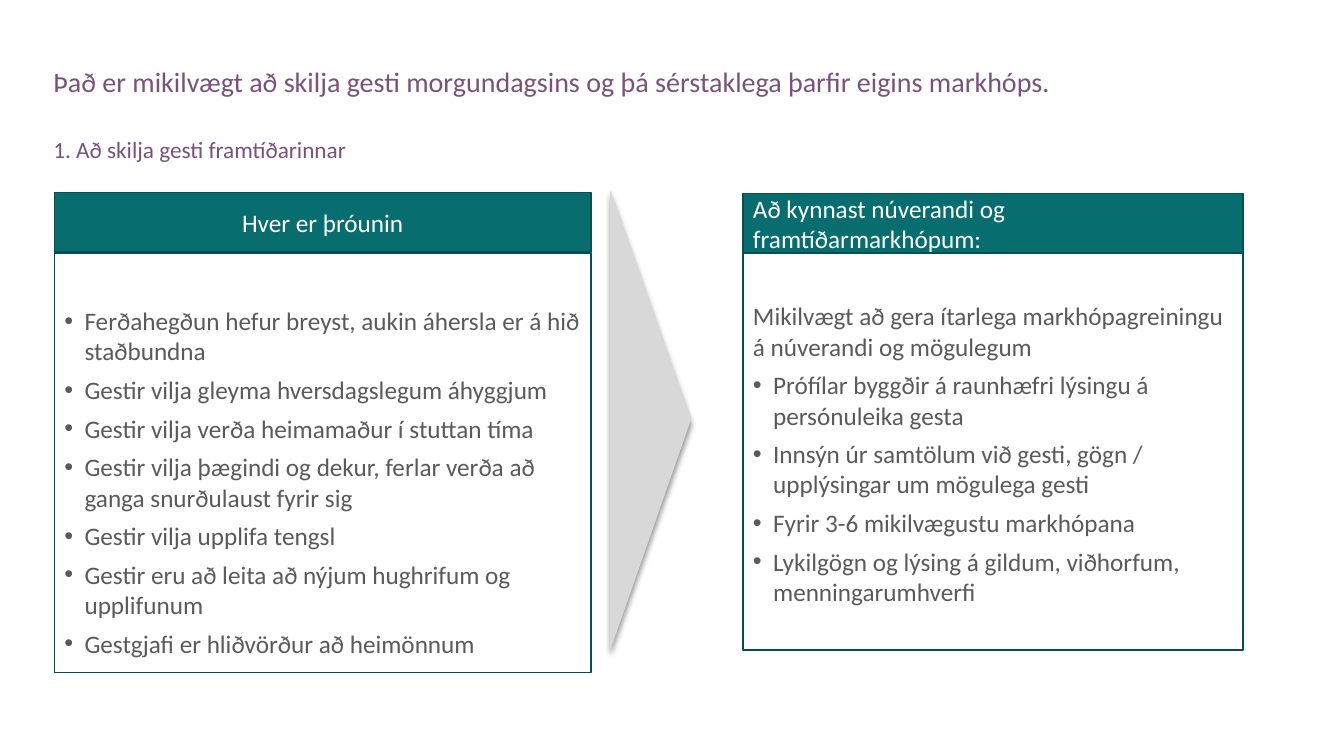
"""Builds a slide on understanding the guests of the future."""
from lxml import etree
from pptx import Presentation
from pptx import util as u
from pptx.dml.color import RGBColor
from pptx.enum import shapes, text
from pptx.oxml.ns import qn

COLORS = {"plum": "79527B", "teal": "086D6E", "border": "054F50",
          "body": "595A59", "arrow": "D8D8D8", "white": "FFFFFF", "shadow": "000000"}
FONT = "Calibri"
HEADING = "Það er mikilvægt að skilja gesti morgundagsins og þá sérstaklega þarfir eigins markhóps."
SUBHEADING = "1. Að skilja gesti framtíðarinnar"
TRENDS = [
    "Ferðahegðun hefur breyst, aukin áhersla er á hið staðbundna",
    "Gestir vilja gleyma hversdagslegum áhyggjum",
    "Gestir vilja verða heimamaður í stuttan tíma",
    "Gestir vilja þægindi og dekur, ferlar verða að ganga snurðulaust fyrir sig",
    "Gestir vilja upplifa tengsl",
    "Gestir eru að leita að nýjum hughrifum og upplifunum",
    "Gestgjafi er hliðvörður að heimönnum",
]
AUDIENCE_INTRO = "Mikilvægt að gera ítarlega markhópagreiningu á núverandi og mögulegum"
AUDIENCES = [
    "Prófílar byggðir á raunhæfri lýsingu á persónuleika gesta",
    "Innsýn úr samtölum við gesti, gögn / upplýsingar um mögulega gesti",
    "Fyrir 3-6 mikilvægustu markhópana",
    "Lykilgögn og lýsing á gildum, viðhorfum, menningarumhverfi",
]


def rgb(name):
    return RGBColor.from_string(COLORS[name])


def set_values(target, values):
    for name, value in values.items():
        setattr(target, name, value)


def add_child(parent, tag, **attributes):
    child = etree.SubElement(parent, qn(tag))
    for name, value in attributes.items():
        child.set(name, str(value))
    return child


def set_bullet(paragraph, bulleted):
    properties = paragraph._p.get_or_add_pPr()
    indent = u.Inches(0.2) if bulleted else 0
    properties.set("marL", str(indent))
    properties.set("indent", str(-indent))
    if bulleted:
        add_child(add_child(properties, "a:buClr"), "a:srgbClr", val=COLORS["body"])
        add_child(properties, "a:buFont", typeface="Arial")
        add_child(properties, "a:buChar", char="•")
    else:
        add_child(properties, "a:buNone")


def format_frame(frame, anchor, top=0.05):
    set_values(frame, {
        "word_wrap": True, "auto_size": text.MSO_AUTO_SIZE.NONE, "vertical_anchor": anchor,
        "margin_left": u.Inches(0.1), "margin_right": u.Inches(0.1),
        "margin_top": u.Inches(top), "margin_bottom": u.Inches(0.05)})


def write_paragraph(paragraph, words, size, color, bulleted=False, **values):
    paragraph.text = words
    set_bullet(paragraph, bulleted)
    set_values(paragraph, {"alignment": text.PP_ALIGN.LEFT, "space_before": u.Pt(0), **values})
    set_values(paragraph.font, {"name": FONT, "size": u.Pt(size)})
    paragraph.font.color.rgb = rgb(color)


def fill_placeholder(placeholder, top, height, words, size, line_spacing):
    set_values(placeholder, {"left": u.Inches(0.43), "top": u.Inches(top),
                             "width": u.Inches(12.54), "height": u.Inches(height)})
    format_frame(placeholder.text_frame, text.MSO_ANCHOR.TOP)
    write_paragraph(placeholder.text_frame.paragraphs[0], words, size, "plum",
                    line_spacing=line_spacing)


def add_block(slide, kind, box, fill, line):
    shape = slide.shapes.add_shape(kind, *map(u.Inches, box))
    shape.shadow.inherit = False
    if fill:
        shape.fill.solid()
        shape.fill.fore_color.rgb = rgb(fill)
    else:
        shape.fill.background()
    shape.line.color.rgb = rgb(line)
    shape.line.width = u.Pt(1)
    return shape


def add_header(slide, box, words, alignment):
    shape = add_block(slide, shapes.MSO_SHAPE.RECTANGLE, box, "teal", "border")
    format_frame(shape.text_frame, text.MSO_ANCHOR.MIDDLE)
    write_paragraph(shape.text_frame.paragraphs[0], words, 18, "white", alignment=alignment)


def add_list_box(slide, box, bullets, top_margin, intro=None):
    shape = add_block(slide, shapes.MSO_SHAPE.RECTANGLE, box, None, "border")
    frame = shape.text_frame
    format_frame(frame, text.MSO_ANCHOR.MIDDLE, top_margin)
    items = ([(intro, False)] if intro else []) + [(bullet, True) for bullet in bullets]
    for index, (words, bulleted) in enumerate(items):
        paragraph = frame.add_paragraph() if index else frame.paragraphs[0]
        write_paragraph(paragraph, words, 18, "body", bulleted,
                        space_before=u.Pt(6 if index else 0))


def add_arrow(slide, box):
    shape = add_block(slide, shapes.MSO_SHAPE.ISOSCELES_TRIANGLE, box, "arrow", "arrow")
    shape.rotation = 90
    effects = shape._element.spPr.find(qn("a:effectLst"))
    shadow = add_child(effects, "a:outerShdw", blurRad=u.Pt(4), dist=u.Pt(3),
                       dir=90 * 60000, rotWithShape=0)
    color = add_child(shadow, "a:srgbClr", val=COLORS["shadow"])
    add_child(color, "a:alpha", val=40000)


def main():
    presentation = Presentation()
    set_values(presentation, {"slide_width": u.Inches(13.33), "slide_height": u.Inches(7.5)})
    slide = presentation.slides.add_slide(presentation.slide_layouts[1])
    fill_placeholder(slide.shapes.title, 0.63, 0.64, HEADING, 20, 0.9)
    fill_placeholder(slide.placeholders[1], 1.35, 0.33, SUBHEADING, 16.6, 0.8)
    add_list_box(slide, (0.54, 2.51, 5.32, 4.16), TRENDS, 0.43)
    add_arrow(slide, (4.19, 3.77, 4.52, 0.79))
    add_list_box(slide, (7.37, 2.51, 4.96, 3.94), AUDIENCES, 0.09, AUDIENCE_INTRO)
    add_header(slide, (0.54, 1.91, 5.32, 0.59), "Hver er þróunin", text.PP_ALIGN.CENTER)
    add_header(slide, (7.37, 1.92, 4.96, 0.59),
               "Að kynnast núverandi og framtíðarmarkhópum:", text.PP_ALIGN.LEFT)
    presentation.save("out.pptx")


if __name__ == "__main__":
    main()
